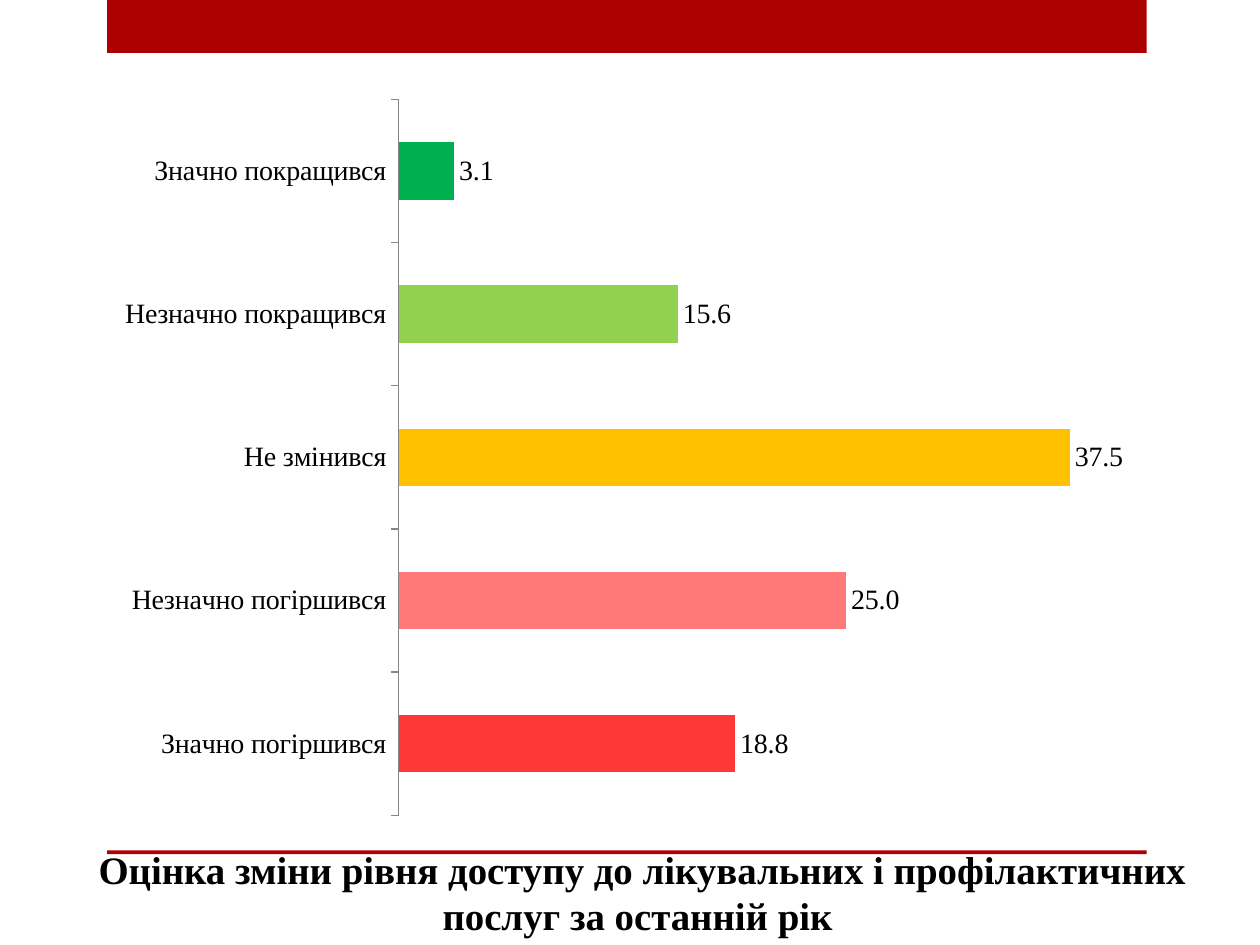
from pptx import Presentation
from pptx.chart.data import CategoryChartData
from pptx.dml.color import RGBColor
from pptx.enum.chart import XL_CHART_TYPE as ChartType, XL_LABEL_POSITION as LabelPosition
from pptx.enum.chart import XL_TICK_LABEL_POSITION as TickLabel, XL_TICK_MARK as Tick
from pptx.enum.shapes import MSO_SHAPE as Shape
from pptx.enum.text import MSO_ANCHOR as Anchor, PP_ALIGN as Align
from pptx.util import Inches, Pt

FONT = "Times New Roman"
RED, BLACK, GRAY = "AD0101", "000000", "868686"
TITLE = "Оцінка зміни рівня доступу до лікувальних і профілактичних послуг за останній рік "
RATINGS = [
    ("Значно покращився", 3.1, "00B050"),
    ("Незначно покращився", 15.6, "92D050"),
    ("Не змінився", 37.5, "FFC000"),
    ("Незначно погіршився", 25.0, "FE7979"),
    ("Значно погіршився", 18.8, "FE3737"),
]


def color(code):
    """Turn a hex string into a colour."""
    return RGBColor.from_string(code)


def assign(target, values):
    """Set attributes of an object from a dict."""
    for name, value in values.items():
        setattr(target, name, value)


def style_font(font, size, bold=False):
    """Give a font the slide's typeface, size and colour."""
    assign(font, {"name": FONT, "size": Pt(size), "bold": bold})
    font.color.rgb = color(BLACK)


def add_band(page, box):
    """Draw a plain red band in the box."""
    band = page.shapes.add_shape(Shape.RECTANGLE, *map(Inches, box))
    band.shadow.inherit = False
    band.fill.solid()
    band.fill.fore_color.rgb = color(RED)
    band.line.fill.background()


def add_title(page, box):
    """Write the bold centred title at the foot of the box."""
    frame = page.shapes.add_textbox(*map(Inches, box)).text_frame
    assign(frame, {"word_wrap": True, "vertical_anchor": Anchor.BOTTOM})
    para = frame.paragraphs[0]
    para.alignment = Align.CENTER
    span = para.add_run()
    span.text = TITLE
    style_font(span.font, 22.2, bold=True)


def add_rating_chart(page, box):
    """Chart the ratings as horizontal bars, one colour each."""
    names, values, fills = zip(*RATINGS)
    data = CategoryChartData(number_format="###0.0")
    data.categories = names
    data.add_series("Series 1", values)
    chart = page.shapes.add_chart(ChartType.BAR_CLUSTERED, *map(Inches, box), data).chart
    assign(chart, {"has_legend": False, "has_title": False})
    style_font(chart.font, 16)

    assign(chart.category_axis, {
        "reverse_order": True,
        "has_major_gridlines": False,
        "major_tick_mark": Tick.OUTSIDE,
        "minor_tick_mark": Tick.NONE,
        "tick_label_position": TickLabel.NEXT_TO_AXIS,
    })
    chart.category_axis.format.line.color.rgb = color(GRAY)
    assign(chart.value_axis, {
        "visible": False,
        "has_major_gridlines": False,
        "minimum_scale": 0,
        "maximum_scale": 40,
    })

    plot = chart.plots[0]
    assign(plot, {"gap_width": 150, "vary_by_categories": False, "has_data_labels": True})
    assign(plot.data_labels, {
        "show_value": True,
        "number_format": "###0.0",
        "number_format_is_linked": False,
        "position": LabelPosition.OUTSIDE_END,
    })
    style_font(plot.data_labels.font, 16)
    series = plot.series[0]
    series.invert_if_negative = False
    for index, code in enumerate(fills):
        fill = series.points[index].format.fill
        fill.solid()
        fill.fore_color.rgb = color(code)


def main():
    """Build the slide and save the deck."""
    deck = Presentation()
    assign(deck, {"slide_width": Inches(10), "slide_height": Inches(7.5)})
    page = deck.slides.add_slide(deck.slide_layouts[6])
    add_band(page, (0.85, 0, 8.25, 0.42))
    add_band(page, (0.85, 6.75, 8.25, 0.03))
    add_title(page, (0.24, 6.8, 9.72, 0.7))
    add_rating_chart(page, (0.83, 0.67, 8.18, 5.92))
    deck.save("out.pptx")


if __name__ == "__main__":
    main()
